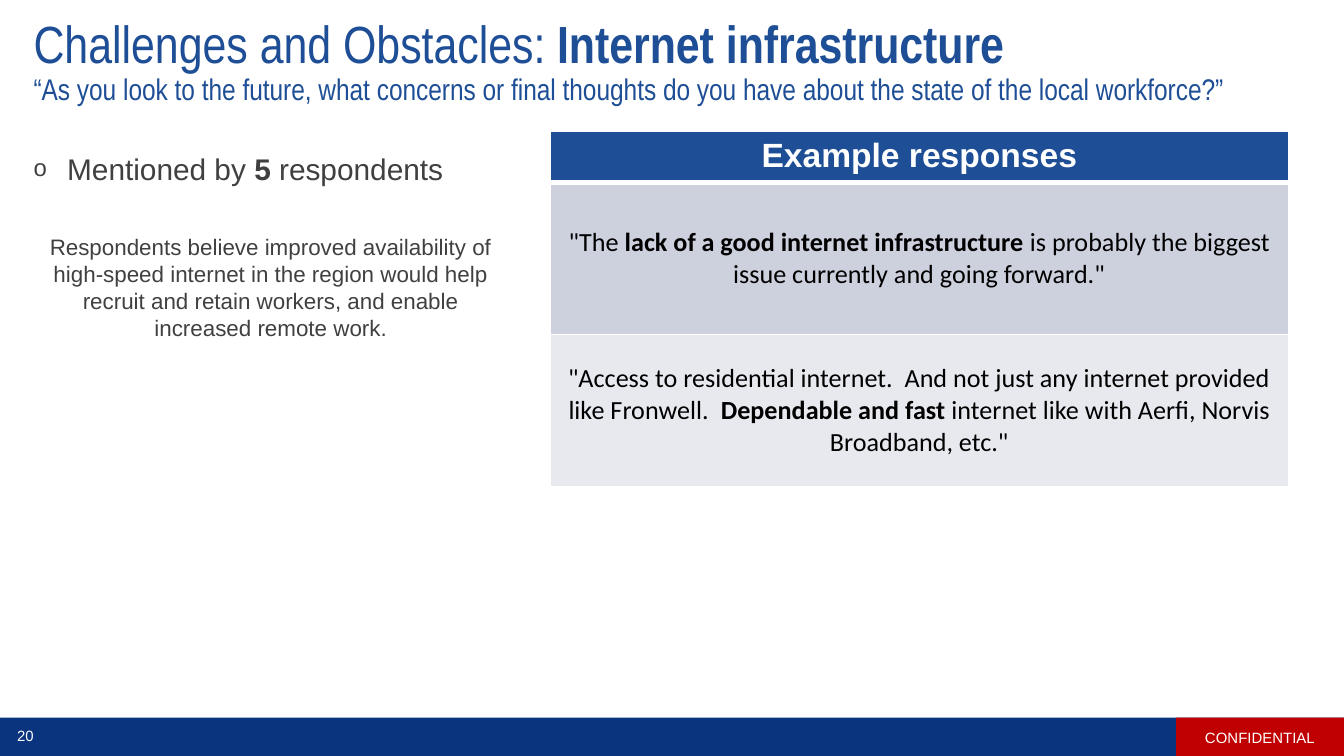
"""Build the slide on internet infrastructure as a workforce obstacle."""
from lxml import etree
from pptx import Presentation
from pptx.dml.color import RGBColor
from pptx.enum.shapes import MSO_SHAPE
from pptx.enum.text import MSO_ANCHOR, MSO_AUTO_SIZE, PP_ALIGN
from pptx.oxml import parse_xml
from pptx.oxml.ns import nsdecls, qn
from pptx.util import Inches, Pt

RECT = MSO_SHAPE.RECTANGLE
MIDDLE, TOP = MSO_ANCHOR.MIDDLE, MSO_ANCHOR.TOP
LEFT, CENTER = PP_ALIGN.LEFT, PP_ALIGN.CENTER
FIXED = MSO_AUTO_SIZE.NONE
BLUE, WHITE, GRAY = "1E4E96", "FFFFFF", "404040"


def rgb(code):
    return RGBColor.from_string(code)


def write(par, parts, size, face, color, align=CENTER):
    par.alignment = align
    for text, bold in parts:
        run = par.add_run()
        run.text = text
        run.font.size = Pt(size)
        run.font.name = face
        run.font.bold = bold
        run.font.color.rgb = rgb(color)


deck = Presentation()
deck.slide_width = Inches(10)
deck.slide_height = Inches(10) * 9 // 16
slide = deck.slides.add_slide(deck.slide_layouts[1])
shapes = slide.shapes

for left, width, color, label in [(0, 10, "0A357E", ""), (8.75, 1.25, "C00000", "CONFIDENTIAL")]:
    bar = shapes.add_shape(RECT, Inches(left), Inches(5.34), Inches(width), Inches(0.29))
    bar.shadow.inherit = False
    bar.fill.solid()
    bar.fill.fore_color.rgb = rgb(color)
    bar.line.fill.background()
    if label:
        bar.text_frame.vertical_anchor = MIDDLE
        write(bar.text_frame.paragraphs[0], [(label, False)], 8, "Arial", WHITE)

page = shapes.add_textbox(0, Inches(5.35), Inches(0.38), Inches(0.24)).text_frame
page.word_wrap = True
page.vertical_anchor = MIDDLE
write(page.paragraphs[0], [("20", False)], 8, "Arial", WHITE)

title = shapes.title
title.left, title.top = Inches(0.15), Inches(0.15)
title.width, title.height = Inches(9.67), Inches(0.63)
frame = title.text_frame
frame.auto_size = FIXED
frame.vertical_anchor = MIDDLE
frame.margin_left = frame.margin_top = frame.margin_bottom = Inches(0.1)
frame.margin_right = Inches(0.2)
par = frame.paragraphs[0]
par.line_spacing = 0.9
write(par, [("Challenges and Obstacles: ", False), ("Internet infrastructure", True)],
      28, "Arial Narrow", BLUE, LEFT)
par.add_line_break()
write(par, [("“As you look to the future, what concerns or final thoughts do you have "
             "about the state of the local workforce?”", False)], 16, "Arial Narrow", BLUE, LEFT)

body = slide.placeholders[1]
body.left, body.top = Inches(0.15), Inches(1.07)
body.width, body.height = Inches(3.73), Inches(2.7)
frame = body.text_frame
frame.auto_size = FIXED
frame.vertical_anchor = TOP
point, note = frame.paragraphs[0], frame.add_paragraph()
write(point, [("Mentioned by ", False), ("5", True), (" respondents", False)],
      16, "Arial", GRAY, LEFT)
write(note, [("Respondents believe improved availability of high-speed internet in the region "
              "would help recruit and retain workers, and enable increased remote work.", False)],
      12, "Arial", GRAY)
point.space_before = Pt(0)
note.space_before = Pt(25)
for par, inset in [(point, Inches(0.25)), (note, 0)]:
    props = par._p.get_or_add_pPr()
    props.set("marL", str(inset))
    props.set("indent", str(-inset))
props = point._p.get_or_add_pPr()
for tag, key, val in [("buSzPct", "val", "80000"), ("buFont", "typeface", "Arial"),
                      ("buChar", "char", "o")]:
    etree.SubElement(props, qn("a:" + tag)).set(key, val)
etree.SubElement(note._p.get_or_add_pPr(), qn("a:buNone"))

rows = [
    (0.3, BLUE, TOP, 18, "Arial", WHITE, 1, 3, [("Example responses", True)]),
    (1.13, "CDD0DD", MIDDLE, 14, "Calibri", "000000", 3, 1, [
        ("\"The ", False), ("lack of a good internet infrastructure ", True),
        ("is probably the biggest issue currently and going forward.\"", False)]),
    (1.13, "E8E9EF", MIDDLE, 14, "Calibri", "000000", 1, 1, [
        ("\"Access to residential internet.  And not just any internet provided like Fronwell.  ",
         False),
        ("Dependable and fast ", True),
        ("internet like with Aerfi, Norvis Broadband, etc.\"", False)]),
]
table = shapes.add_table(len(rows), 1, Inches(4.09), Inches(0.98), Inches(5.5), Inches(2.56)).table
for num, (height, fill, anchor, size, face, color, above, below, parts) in enumerate(rows):
    table.rows[num].height = Inches(height)
    cell = table.cell(num, 0)
    cell.margin_top = cell.margin_bottom = Inches(0.04)
    cell.fill.solid()
    cell.fill.fore_color.rgb = rgb(fill)
    cell.vertical_anchor = anchor
    write(cell.text_frame.paragraphs[0], parts, size, face, color)
    props = cell._tc.get_or_add_tcPr()
    for spot, (side, width) in enumerate([("L", 1), ("R", 1), ("T", above), ("B", below)]):
        props.insert(spot, parse_xml(
            f'<a:ln{side} {nsdecls("a")} w="{Pt(width)}"><a:solidFill>'
            f'<a:srgbClr val="{WHITE}"/></a:solidFill></a:ln{side}>'))

deck.save("out.pptx")
